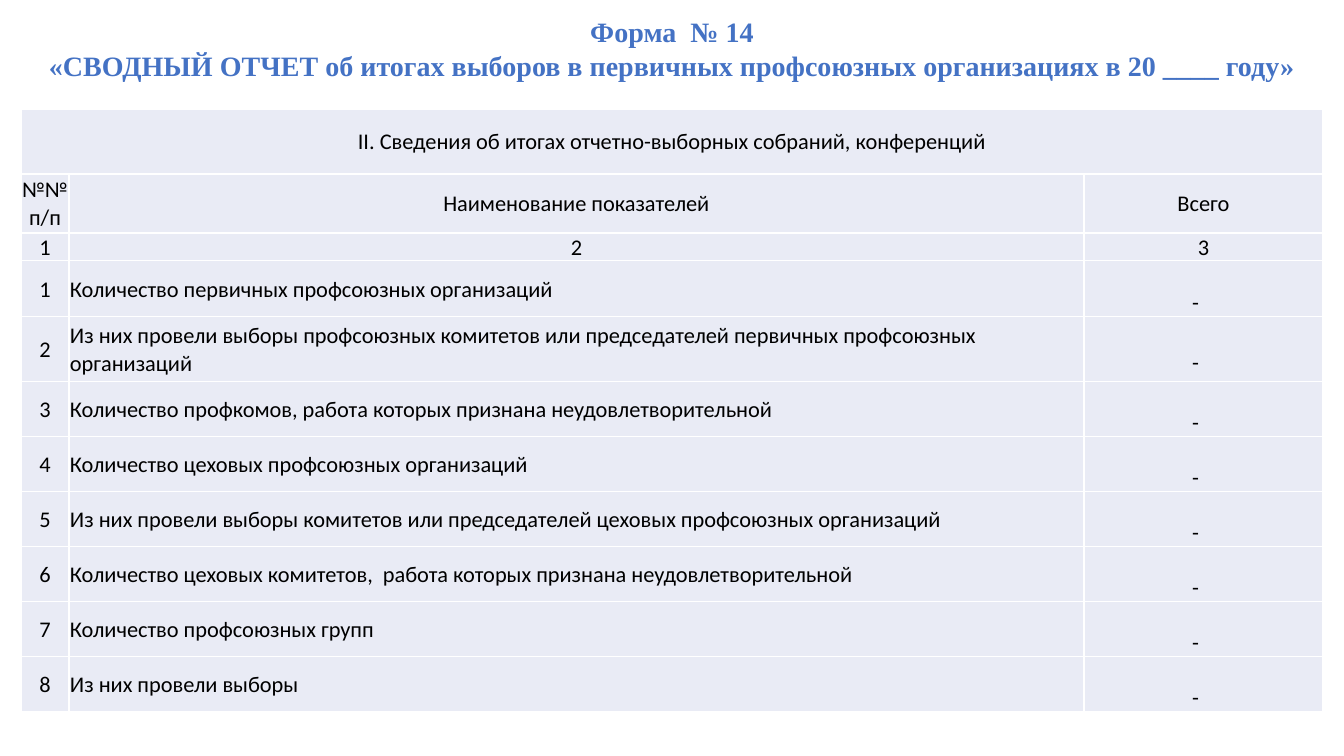
from lxml import etree
from pptx import Presentation
from pptx.dml.color import RGBColor
from pptx.enum.text import MSO_ANCHOR, MSO_AUTO_SIZE, PP_ALIGN
from pptx.oxml.ns import qn
from pptx.util import Pt

SCALE = 12192000 / 1344
BLUE = RGBColor(0x44, 0x72, 0xC4)
PALE = RGBColor(0xE9, 0xEB, 0xF5)
BLACK = RGBColor(0, 0, 0)
WHITE = RGBColor(0xFF, 0xFF, 0xFF)
LEFT, CENTER = PP_ALIGN.LEFT, PP_ALIGN.CENTER
MIDDLE = MSO_ANCHOR.MIDDLE
GROW = MSO_AUTO_SIZE.SHAPE_TO_FIT_TEXT

TITLE = """Форма  № 14
«СВОДНЫЙ ОТЧЕТ об итогах выборов в первичных профсоюзных организациях в 20 ____ году»"""
HEADS = [
    ("II. Сведения об итогах отчетно-выборных собраний, конференций", "", ""),
    ("№№ п/п", "Наименование показателей", "Всего"),
    ("1", "2", "3"),
]
ITEMS = [
    "Количество первичных профсоюзных организаций",
    "Из них провели выборы профсоюзных комитетов или председателей первичных профсоюзных организаций",
    "Количество профкомов, работа которых признана неудовлетворительной",
    "Количество цеховых профсоюзных организаций",
    "Из них провели выборы комитетов или председателей цеховых профсоюзных организаций",
    "Количество цеховых комитетов,  работа которых признана неудовлетворительной",
    "Количество профсоюзных групп",
    "Из них провели выборы",
]
COLS = [48, 1015, 239]
ROWS = [65, 59, 27, 56, 65] + [55] * 6


def px(n):
    return round(n * SCALE)


def style(frame, font, size, color, bold, align):
    for para in frame.paragraphs:
        para.alignment = align
        for run in para.runs:
            run.font.name = font
            run.font.size = Pt(size)
            run.font.bold = bold
            run.font.color.rgb = color


def add_title(slide):
    box = slide.shapes.add_textbox(0, px(10), px(1344), px(78))
    frame = box.text_frame
    frame.word_wrap = True
    frame.auto_size = GROW
    frame.text = TITLE
    style(frame, "Times New Roman", 20, BLUE, True, CENTER)


def add_edges(cell):
    """Draw a thin white line on each side of the cell."""
    props = cell._tc.get_or_add_tcPr()
    for i, side in enumerate(("lnL", "lnR", "lnT", "lnB")):
        line = etree.Element(qn(f"a:{side}"), w=str(Pt(1)))
        fill = etree.SubElement(line, qn("a:solidFill"))
        etree.SubElement(fill, qn("a:srgbClr"), val=str(WHITE))
        props.insert(i, line)


def fill_cell(cell, text, align):
    cell.fill.solid()
    cell.fill.fore_color.rgb = PALE
    add_edges(cell)
    cell.vertical_anchor = MIDDLE
    cell.margin_left = cell.margin_right = cell.margin_top = px(1)
    cell.margin_bottom = 0
    cell.text = text
    style(cell.text_frame, "Calibri", 16, BLACK, False, align)


def add_grid(slide):
    data = HEADS + [(str(n), item, "-") for n, item in enumerate(ITEMS, 1)]
    frame = slide.shapes.add_table(len(ROWS), len(COLS), px(21), px(109),
                                   px(sum(COLS)), px(sum(ROWS)))
    grid = frame.table
    grid.first_row = grid.horz_banding = False
    for col, width in zip(grid.columns, COLS):
        col.width = px(width)
    for row, height in zip(grid.rows, ROWS):
        row.height = px(height)
    for r, texts in enumerate(data):
        body = r >= len(HEADS)
        for c, text in enumerate(texts):
            cell = grid.cell(r, c)
            fill_cell(cell, text, LEFT if body and c == 1 else CENTER)
            if body and c == 2:
                cell.margin_top = px(27)
                cell.margin_right = px(17)
    grid.cell(0, 0).merge(grid.cell(0, 2))


def main():
    deck = Presentation()
    deck.slide_width, deck.slide_height = px(1344), px(756)
    slide = deck.slides.add_slide(deck.slide_layouts[6])
    add_title(slide)
    add_grid(slide)
    deck.save("out.pptx")


if __name__ == "__main__":
    main()
